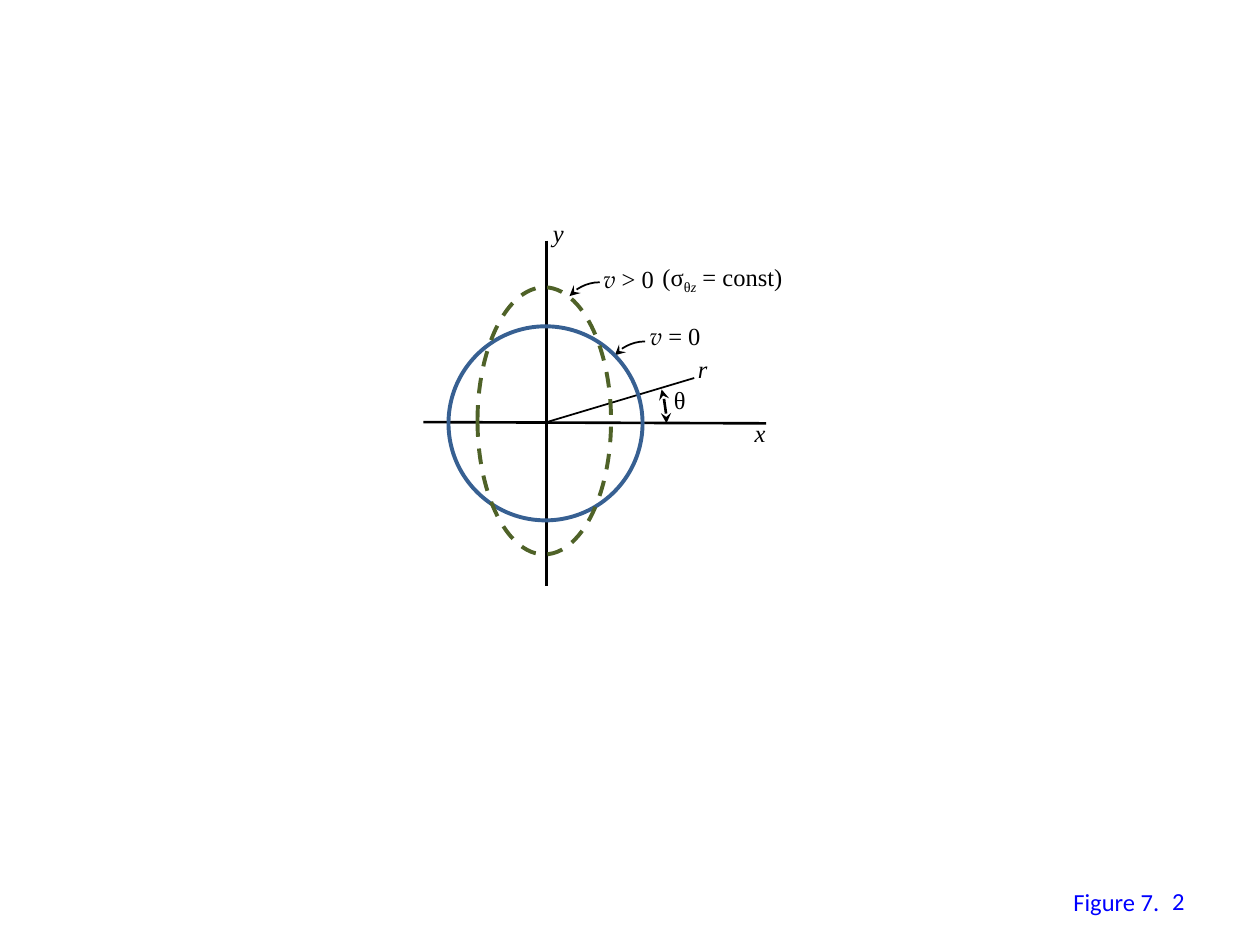
import dataclasses

import lxml.etree
import pptx
import pptx.dml.color
import pptx.enum.dml
import pptx.enum.shapes
import pptx.enum.text
import pptx.oxml.ns
import pptx.util
from pptx.util import Inches


@dataclasses.dataclass(frozen=True)
class Theme:
    black: str = "000000"
    circle: str = "376092"
    ellipse: str = "4F6228"
    caption: str = "0000FF"
    math_font: str = "Times New Roman"
    velocity_font: str = "TeX Gyre Pagella"
    caption_font: str = "Calibri"
    text_size: float = 14
    thin: float = 1
    axis: float = 1.5
    outline: float = 2.25


class FigureBuilder:
    def __init__(self, slide, theme):
        self.slide = slide
        self.theme = theme

    def style_line(self, shape, width, color=None, ends=()):
        shape.line.color.rgb = pptx.dml.color.RGBColor.from_string(color or self.theme.black)
        shape.line.width = pptx.util.Pt(width)
        for end in ends:
            element = lxml.etree.SubElement(shape.line._get_or_add_ln(), pptx.oxml.ns.qn(f"a:{end}"))
            element.set("type", "stealth")

    def line(self, start, end, width):
        connector = self.slide.shapes.add_connector(
            pptx.enum.shapes.MSO_CONNECTOR.STRAIGHT, *map(Inches, start + end))
        self.style_line(connector, width)
        lxml.etree.SubElement(connector._element.spPr, pptx.oxml.ns.qn("a:effectLst"))

    def outline(self, kind, box, width, color=None, ends=()):
        shape = self.slide.shapes.add_shape(kind, *map(Inches, box))
        shape.shadow.inherit = False
        shape.fill.background()
        self.style_line(shape, width, color, ends)
        return shape

    def curved_arrow(self, tip, segments=8):
        bend = [(0, 0), (0.04, -0.05), (0.13, -0.11), (0.24, -0.11)]
        weights = (1, 3, 3, 1)
        points = []
        for step in range(segments + 1):
            t = step / segments
            points.append(tuple(
                Inches(tip[axis] + sum(
                    weight * (1 - t) ** (3 - power) * t ** power * bend[power][axis]
                    for power, weight in enumerate(weights)))
                for axis in (0, 1)))
        builder = self.slide.shapes.build_freeform(*points[0])
        builder.add_line_segments(points[1:], close=False)
        arrow = builder.convert_to_shape()
        arrow.shadow.inherit = False
        arrow.fill.background()
        self.style_line(arrow, self.theme.thin, ends=("headEnd",))

    def text(self, box, *parts, font=None, color=None):
        shape = self.slide.shapes.add_textbox(*map(Inches, box))
        frame = shape.text_frame
        frame.word_wrap = False
        paragraph = frame.paragraphs[0]
        for content, style in parts:
            run = paragraph.add_run()
            run.text = content
            run.font.size = pptx.util.Pt(self.theme.text_size)
            run.font.name = style.get("font", font or self.theme.math_font)
            run.font.italic = style.get("italic", False)
            run.font.color.rgb = pptx.dml.color.RGBColor.from_string(color or self.theme.black)
            if style.get("subscript"):
                run._r.get_or_add_rPr().set("baseline", "-25000")
        return shape

    def velocity_label(self, left, top, condition):
        self.text((left, top, 0.66, 0.34),
                  ("v ", {"font": self.theme.velocity_font, "italic": True}), (condition, {}))

    def caption(self, box, content):
        return self.text(box, (content, {}), font=self.theme.caption_font, color=self.theme.caption)


def main():
    presentation = pptx.Presentation()
    presentation.slide_width, presentation.slide_height = Inches(10), Inches(7.5)
    slide = presentation.slides.add_slide(presentation.slide_layouts[6])
    theme = Theme()
    figure = FigureBuilder(slide, theme)
    shapes = pptx.enum.shapes.MSO_SHAPE

    figure.caption((8.42, 6.99, 0.89, 0.34), "Figure 7.")
    figure.line((6.08, 3.36), (3.36, 3.35), theme.axis)
    figure.line((4.34, 1.91), (4.34, 4.65), theme.axis)

    figure.velocity_label(5.06, 2.5, "= 0")
    figure.text((5.16, 2.03, 1.23, 0.34), ("(σ", {}), ("θ", {"subscript": True}),
                ("z", {"subscript": True, "italic": True}), (" = const)", {}))
    for tip in ((4.88, 2.82), (4.52, 2.35)):
        figure.curved_arrow(tip)
    figure.velocity_label(4.69, 2.05, "> 0")

    figure.line((4.34, 3.35), (5.51, 3), theme.thin)
    figure.outline(shapes.OVAL, (3.56, 2.59, 1.54, 1.54), theme.outline, theme.circle)
    ellipse = figure.outline(shapes.OVAL, (3.79, 2.28, 1.06, 2.12), theme.outline, theme.ellipse)
    ellipse.line.dash_style = pptx.enum.dml.MSO_LINE.DASH
    angle = figure.outline(shapes.ARC, (3.39, 2.41, 1.9, 1.9), theme.axis,
                           ends=("headEnd", "tailEnd"))
    angle.adjustments[0], angle.adjustments[1] = 206.16, 0

    figure.text((5.25, 3.01, 0.31, 0.34), ("θ", {}))
    for name, left, top in (("x", 5.89, 3.27), ("y", 4.29, 1.68), ("r", 5.44, 2.76)):
        figure.text((left, top, 0.34, 0.34), (name, {"italic": True}))

    number = figure.caption((7.17, 6.95, 2.33, 0.4), "2").text_frame
    number.word_wrap = True
    number.vertical_anchor = pptx.enum.text.MSO_ANCHOR.MIDDLE
    number.paragraphs[0].alignment = pptx.enum.text.PP_ALIGN.RIGHT

    presentation.save("out.pptx")


if __name__ == "__main__":
    main()
